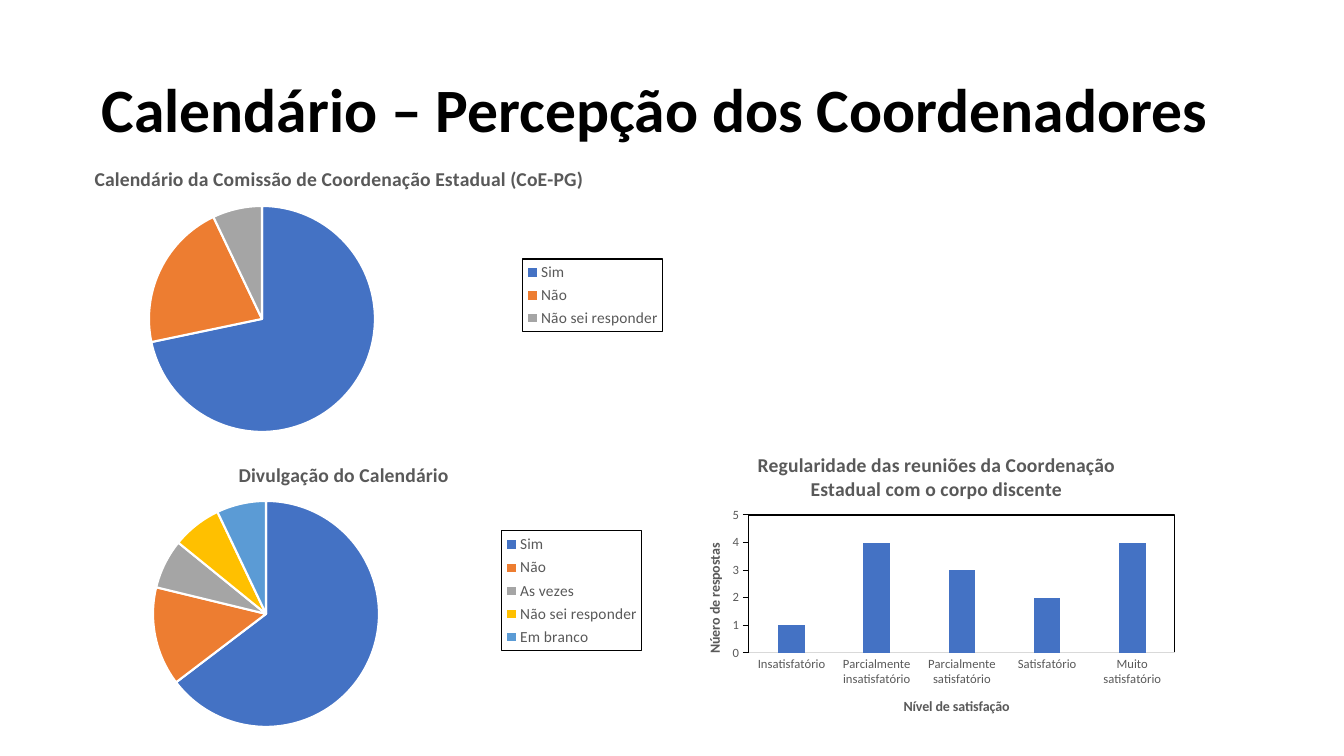
from lxml import etree
from pptx import Presentation
from pptx.chart.data import CategoryChartData
from pptx.dml.color import RGBColor
from pptx.enum.chart import XL_CHART_TYPE as ChartType
from pptx.enum.chart import XL_LEGEND_POSITION as LegendPosition
from pptx.enum.chart import XL_TICK_MARK as TickMark
from pptx.enum.text import MSO_ANCHOR as Anchor
from pptx.oxml import parse_xml
from pptx.oxml.ns import nsdecls, qn
from pptx.util import Pt

PX = 914400 / 100.8
FONT = "Calibri"
GREY = "595959"
BLACK = "000000"
PALETTE = ["4472C4", "ED7D31", "A5A5A5", "FFC000", "5B9BD5"]


def px(length):
    return round(length * PX)


def color(hex_string):
    return RGBColor.from_string(hex_string)


def style_font(font, size, hex_color=GREY, bold=False):
    font.name = FONT
    font.size = Pt(size)
    font.bold = bold
    font.color.rgb = color(hex_color)


def write_text(frame, text, size, hex_color=GREY, bold=False, line_spacing=None):
    paragraph = frame.paragraphs[0]
    if line_spacing:
        paragraph.line_spacing = line_spacing
    run = paragraph.add_run()
    run.text = text
    style_font(run.font, size, hex_color, bold)


def place(element, box, area, inner=False):
    """Fix a chart part at box (x, y and perhaps width, height), in slide px."""
    left, top, width, height = area
    shares = [(box[0] - left) / width, (box[1] - top) / height]
    shares += [length / total for length, total in zip(box[2:], (width, height))]
    layout = parse_xml(f'<c:layout {nsdecls("c")}><c:manualLayout/></c:layout>')
    entries = [("layoutTarget", "inner")] if inner else []
    entries += [("xMode", "edge"), ("yMode", "edge")]
    entries += [(name, f"{share:.4f}") for name, share in zip("xywh", shares)]
    for name, value in entries:
        etree.SubElement(layout[0], qn(f"c:{name}")).set("val", value)
    for old in element.findall(qn("c:layout")):
        element.remove(old)
    overlay = element.find(qn("c:overlay"))
    if overlay is None:
        element.insert(0, layout)
    else:
        overlay.addprevious(layout)


def black_frame():
    return parse_xml(
        f'<c:spPr {nsdecls("c", "a")}><a:noFill/><a:ln w="9525"><a:solidFill>'
        f'<a:srgbClr val="{BLACK}"/></a:solidFill></a:ln></c:spPr>')


def plot_area(chart):
    return chart.element.find(".//" + qn("c:plotArea"))


def add_chart(slide, kind, area, title, title_left, plot_box, values):
    data = CategoryChartData()
    data.categories = list(values)
    data.add_series(title, list(values.values()))
    chart = slide.shapes.add_chart(kind, *map(px, area), data).chart
    style_font(chart.font, 10, BLACK)
    chart.has_legend = False
    chart.has_title = True
    write_text(chart.chart_title.text_frame, title, 14, bold=True)
    place(chart.chart_title.element if hasattr(chart.chart_title, "element")
          else chart.chart_title._element, (title_left, area[1] + 18), area)
    place(plot_area(chart), plot_box, area, inner=True)
    return chart


def add_pie(slide, area, title, title_left, plot_box, legend_box, values):
    chart = add_chart(slide, ChartType.PIE, area, title, title_left, plot_box, values)
    plot = chart.plots[0]
    plot.vary_by_categories = True
    for index, hex_color in enumerate(PALETTE[:len(values)]):
        slice_format = plot.series[0].points[index].format
        slice_format.fill.solid()
        slice_format.fill.fore_color.rgb = color(hex_color)
        slice_format.line.color.rgb = color("FFFFFF")
        slice_format.line.width = Pt(1.5)
    # Framed legend
    chart.has_legend = True
    legend = chart.legend
    legend.position = LegendPosition.RIGHT
    legend.include_in_layout = False
    style_font(legend.font, 11)
    place(legend._element, legend_box, area)
    legend._element.find(qn("c:overlay")).addnext(black_frame())


def style_axis(axis, title, title_at, area, line_color, tick):
    axis.has_major_gridlines = False
    axis.major_tick_mark = tick
    axis.minor_tick_mark = TickMark.NONE
    style_font(axis.tick_labels.font, 9)
    axis.format.line.color.rgb = color(line_color)
    axis.format.line.width = Pt(0.75)
    write_text(axis.axis_title.text_frame, title, 10, bold=True)
    place(axis.axis_title._element, title_at, area)


def add_columns(slide, area, title, title_left, plot_box, values):
    chart = add_chart(slide, ChartType.COLUMN_CLUSTERED, area, title, title_left,
                      plot_box, values)
    plot = chart.plots[0]
    plot.vary_by_categories = False
    plot.gap_width = 219
    plot.overlap = -27
    fill = plot.series[0].format.fill
    fill.solid()
    fill.fore_color.rgb = color(PALETTE[0])
    style_axis(chart.category_axis, "Nível de satisfação", (901, 695), area,
               "D9D9D9", TickMark.NONE)
    style_axis(chart.value_axis, "Núero de respostas", (703, 541), area,
               BLACK, TickMark.OUTSIDE)
    chart.value_axis.minimum_scale = 0
    chart.value_axis.maximum_scale = 5
    chart.value_axis.major_unit = 1
    plot_area(chart).append(black_frame())


def add_title(slide, text):
    frame = slide.shapes.add_textbox(*map(px, (92, 40, 1160, 146))).text_frame
    frame.word_wrap = True
    frame.vertical_anchor = Anchor.MIDDLE
    write_text(frame, text, 44, BLACK, bold=True, line_spacing=0.9)


def main():
    presentation = Presentation()
    presentation.slide_width, presentation.slide_height = px(1344), px(756)
    slide = presentation.slides.add_slide(presentation.slide_layouts[6])

    add_title(slide, "Calendário – Percepção dos Coordenadores")

    # Calendar pies
    add_pie(slide, (0, 144, 672, 302),
            "Calendário da Comissão de Coordenação Estadual (CoE-PG)", 91,
            (149, 206, 226, 226), (523, 259, 140, 73),
            {"Sim": 71, "Não": 21, "Não sei responder": 7})
    add_pie(slide, (30, 440, 621, 302), "Divulgação do Calendário", 235,
            (153, 501, 226, 226), (502, 531, 140, 120),
            {"Sim": 64, "Não": 14, "As vezes": 7, "Não sei responder": 7,
             "Em branco": 7})

    # Meeting regularity
    add_columns(slide, (681, 430, 504, 302),
                "Regularidade das reuniões da Coordenação Estadual com o corpo discente",
                754, (749, 515, 426, 138),
                {"Insatisfatório": 1, "Parcialmente insatisfatório": 4,
                 "Parcialmente satisfatório": 3, "Satisfatório": 2,
                 "Muito satisfatório": 4})

    presentation.save("out.pptx")


if __name__ == "__main__":
    main()
